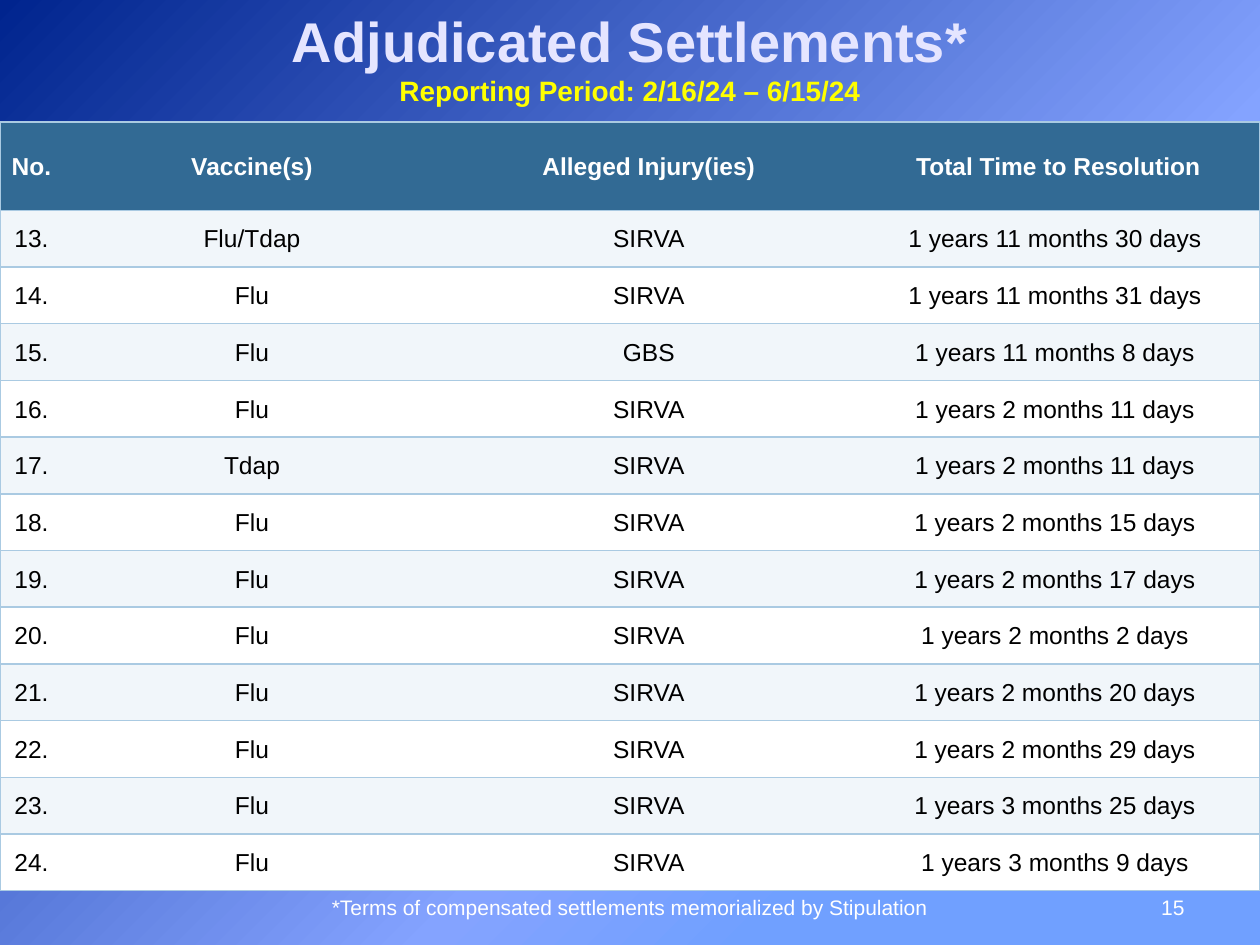
from lxml import etree
from pptx import Presentation
from pptx.dml.color import RGBColor
from pptx.enum.text import MSO_ANCHOR, PP_ALIGN
from pptx.oxml import parse_xml
from pptx.oxml.ns import nsdecls, qn
from pptx.util import Cm, Pt

CENTER, RIGHT = PP_ALIGN.CENTER, PP_ALIGN.RIGHT
MIDDLE, BOTTOM = MSO_ANCHOR.MIDDLE, MSO_ANCHOR.BOTTOM

# Content
TITLE = "Adjudicated Settlements*"
PERIOD = "Reporting Period: 2/16/24 – 6/15/24"
FOOTNOTE = "*Terms of compensated settlements memorialized by Stipulation"
PAGE = "15"
HEADER = ("No.", "Vaccine(s)", "Alleged Injury(ies)", "Total Time to Resolution")
FIRST_NUMBER = 13
SETTLEMENTS = [  # vaccine, injury, (years, months, days)
    ("Flu/Tdap", "SIRVA", (1, 11, 30)),
    ("Flu", "SIRVA", (1, 11, 31)),
    ("Flu", "GBS", (1, 11, 8)),
    ("Flu", "SIRVA", (1, 2, 11)),
    ("Tdap", "SIRVA", (1, 2, 11)),
    ("Flu", "SIRVA", (1, 2, 15)),
    ("Flu", "SIRVA", (1, 2, 17)),
    ("Flu", "SIRVA", (1, 2, 2)),
    ("Flu", "SIRVA", (1, 2, 20)),
    ("Flu", "SIRVA", (1, 2, 29)),
    ("Flu", "SIRVA", (1, 3, 25)),
    ("Flu", "SIRVA", (1, 3, 9)),
]

# Look
COLORS = {
    "title": "E5E5FF", "period": "FFFF00", "white": "FFFFFF", "black": "000000",
    "header": "326A94", "band": "F1F6FA", "border": "AACAE2",
}
BACKGROUND = [(0, "00248E"), (62, "84A3FF"), (77, "70A0FF")]
FORMATS = {
    "title": {"size": Pt(32), "bold": True, "color": "title"},
    "period": {"size": Pt(16), "bold": True, "color": "period"},
    "footer": {"size": Pt(12), "bold": False, "color": "white"},
    "header": {"size": Pt(14), "bold": True, "color": "white"},
    "body": {"size": Pt(14), "bold": False, "color": "black"},
}
CELL = {"margin_left": Cm(0.03), "margin_right": Cm(0.03), "margin_top": Cm(0.03),
        "margin_bottom": 0, "vertical_anchor": MIDDLE}

# Layout, in centimetres
WIDTH, HEIGHT = 25.4, 19.05
TABLE_TOP, TABLE_HEIGHT, HEADER_HEIGHT = 2.46, 15.5, 1.78
COLUMN_WIDTHS = (1.27, 7.62, 8.38, 8.13)
TEXTS = [  # left, top, width, height, anchor, alignment, lines with their format
    (0, 0, WIDTH, 2.29, MIDDLE, CENTER, [(TITLE, "title"), (PERIOD, "period")]),
    (18.21, 17.35, 5.92, 1.32, BOTTOM, RIGHT, [(PAGE, "footer")]),
    (6.35, 17.78, 12.7, 0.89, BOTTOM, CENTER, [(FOOTNOTE, "footer")]),
]


def write(paragraph, text, style, alignment=CENTER):
    paragraph.alignment = alignment
    run = paragraph.add_run()
    run.text = text
    run.font.name = "Arial"
    for attribute, value in FORMATS[style].items():
        if attribute == "color":
            run.font.color.rgb = RGBColor.from_string(COLORS[value])
        else:
            setattr(run.font, attribute, value)


def set_borders(cell, visible):
    properties = cell._tc.get_or_add_tcPr()
    for position, side in enumerate("LRTB"):
        line = etree.Element(qn(f"a:ln{side}"), w=str(Pt(1)))
        if side in visible:
            fill = etree.SubElement(line, qn("a:solidFill"))
            etree.SubElement(fill, qn("a:srgbClr"), val=COLORS["border"])
        else:
            etree.SubElement(line, qn("a:noFill"))
        properties.insert(position, line)


presentation = Presentation()
presentation.slide_width, presentation.slide_height = Cm(WIDTH), Cm(HEIGHT)
slide = presentation.slides.add_slide(presentation.slide_layouts[6])

# Background spreading from the top left corner
stops = "".join(f'<a:gs pos="{position * 1000}"><a:srgbClr val="{color}"/></a:gs>'
                for position, color in BACKGROUND)
slide.element.cSld.insert(0, parse_xml(
    f'<p:bg {nsdecls("p", "a")}><p:bgPr><a:gradFill><a:gsLst>{stops}</a:gsLst>'
    '<a:path path="circle"><a:fillToRect r="100000" b="100000"/></a:path>'
    '</a:gradFill><a:effectLst/></p:bgPr></p:bg>'))

# Title, page number and footnote
for left, top, width, height, anchor, alignment, lines in TEXTS:
    frame = slide.shapes.add_textbox(Cm(left), Cm(top), Cm(width), Cm(height)).text_frame
    frame.word_wrap = True
    frame.vertical_anchor = anchor
    paragraph = frame.paragraphs[0]
    for index, (text, style) in enumerate(lines):
        if index:
            paragraph.add_line_break()
        write(paragraph, text, style, alignment)

# Table of settlements; the trailing space sets the times slightly left
rows = [HEADER] + [
    (f"{number}.", vaccine, injury, "{} years {} months {} days ".format(*time))
    for number, (vaccine, injury, time) in enumerate(SETTLEMENTS, FIRST_NUMBER)]
table = slide.shapes.add_table(len(rows), len(HEADER), 0, Cm(TABLE_TOP),
                               Cm(WIDTH), Cm(TABLE_HEIGHT)).table
table.horz_banding = False
for column, width in zip(table.columns, COLUMN_WIDTHS):
    column.width = Cm(width)
body_height = (TABLE_HEIGHT - HEADER_HEIGHT) / len(SETTLEMENTS)
last_column = len(HEADER) - 1

for row_index, row in enumerate(rows):
    is_header = row_index == 0
    table.rows[row_index].height = Cm(HEADER_HEIGHT if is_header else body_height)
    fill = "header" if is_header else "band" if row_index % 2 else "white"
    for column_index, text in enumerate(row):
        cell = table.cell(row_index, column_index)
        for attribute, value in CELL.items():
            setattr(cell, attribute, value)
        cell.fill.solid()
        cell.fill.fore_color.rgb = RGBColor.from_string(COLORS[fill])
        set_borders(cell, "TB" + {0: "L", last_column: "R"}.get(column_index, ""))
        write(cell.text_frame.paragraphs[0], text, "header" if is_header else "body")

presentation.save("out.pptx")
